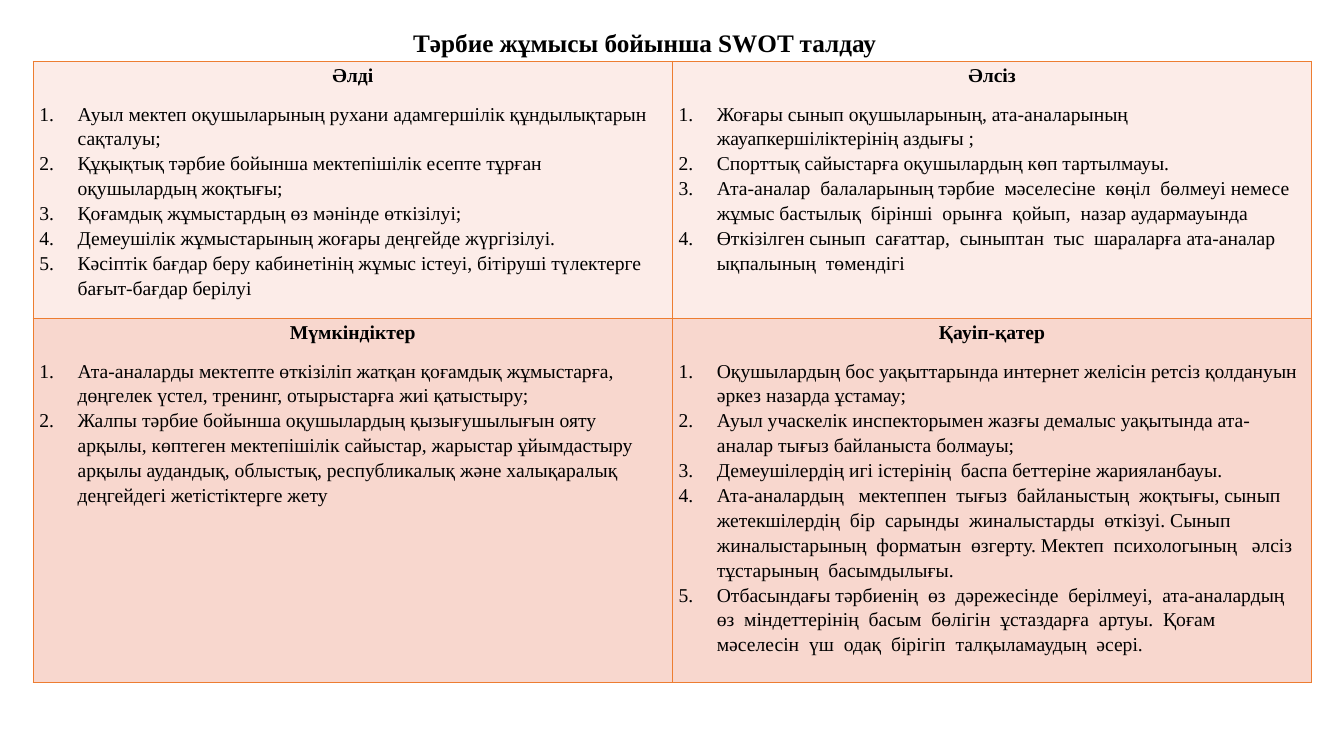
from pptx import Presentation
from pptx.dml.color import RGBColor
from pptx.enum.text import MSO_ANCHOR, MSO_AUTO_SIZE, PP_ALIGN
from pptx.oxml.ns import qn
from pptx.util import Inches, Pt
from lxml.etree import SubElement

BLACK = RGBColor(0x00, 0x00, 0x00)
ORANGE = RGBColor(0xED, 0x7D, 0x31)
PALE_PINK = RGBColor(0xFC, 0xEC, 0xE8)
PINK = RGBColor(0xF8, 0xD7, 0xCE)
FONT = "Times New Roman"

TITLE = "Тәрбие жұмысы бойынша SWOT талдау"
ROW_HEIGHTS = [2.55, 3.61]
ROW_FILLS = [PALE_PINK, PINK]
COLUMN_WIDTH = 6.34
SWOT = [
    [
        ("Әлді", [
            "Ауыл мектеп оқушыларының рухани адамгершілік құндылықтарын сақталуы;",
            "Құқықтық тәрбие бойынша мектепішілік есепте тұрған оқушылардың жоқтығы;",
            "Қоғамдық жұмыстардың өз мәнінде өткізілуі;",
            "Демеушілік жұмыстарының жоғары деңгейде жүргізілуі.",
            "Кәсіптік бағдар беру кабинетінің жұмыс істеуі, бітіруші түлектерге "
            "бағыт-бағдар берілуі",
        ]),
        ("Әлсіз", [
            "Жоғары сынып оқушыларының, ата-аналарының жауапкершіліктерінің аздығы ;",
            "Спорттық сайыстарға оқушылардың көп тартылмауы.",
            "Ата-аналар  балаларының тәрбие  мәселесіне  көңіл  бөлмеуі немесе  "
            "жұмыс бастылық  бірінші  орынға  қойып,  назар аудармауында",
            "Өткізілген сынып  сағаттар,  сыныптан  тыс  шараларға ата-аналар  "
            "ықпалының  төмендігі",
        ]),
    ],
    [
        ("Мүмкіндіктер", [
            "Ата-аналарды мектепте өткізіліп жатқан қоғамдық жұмыстарға, "
            "дөңгелек үстел, тренинг, отырыстарға жиі қатыстыру;",
            "Жалпы тәрбие бойынша оқушылардың қызығушылығын ояту арқылы, "
            "көптеген мектепішілік сайыстар, жарыстар ұйымдастыру арқылы "
            "аудандық, облыстық, республикалық және халықаралық деңгейдегі "
            "жетістіктерге жету",
        ]),
        ("Қауіп-қатер", [
            "Оқушылардың бос уақыттарында интернет желісін ретсіз қолдануын "
            "әркез назарда ұстамау;",
            "Ауыл учаскелік инспекторымен жазғы демалыс уақытында ата-аналар "
            "тығыз байланыста болмауы;",
            "Демеушілердің игі істерінің  баспа беттеріне жарияланбауы.",
            "Ата-аналардың   мектеппен  тығыз  байланыстың  жоқтығы, сынып "
            "жетекшілердің  бір  сарынды  жиналыстарды  өткізуі. Сынып "
            "жиналыстарының  форматын  өзгерту. Мектеп  психологының   әлсіз "
            "тұстарының  басымдылығы.",
            "Отбасындағы тәрбиенің  өз  дәрежесінде  берілмеуі,  ата-аналардың  "
            "өз  міндеттерінің  басым  бөлігін  ұстаздарға  артуы.  Қоғам  "
            "мәселесін  үш  одақ  бірігіп  талқыламаудың  әсері.",
        ]),
    ],
]


def format_paragraph(paragraph, text, size=14, bold=False, space_after=0):
    paragraph.text = text
    paragraph.line_spacing = 1.15
    paragraph.space_after = Pt(space_after)
    paragraph.alignment = PP_ALIGN.CENTER if bold else PP_ALIGN.LEFT
    font = paragraph.font
    font.name, font.size, font.bold = FONT, Pt(size), bold
    font.color.rgb = BLACK


def number_paragraph(paragraph):
    properties = paragraph._p.get_or_add_pPr()
    properties.set("marL", str(Inches(0.38)))
    properties.set("indent", str(Inches(-0.38)))
    numbering = properties.makeelement(qn("a:buAutoNum"), {"type": "arabicPeriod"})
    properties.insert_element_before(numbering, "a:tabLst", "a:defRPr", "a:extLst")


def add_borders(cell):
    properties = cell._tc.get_or_add_tcPr()
    for side in ("a:lnL", "a:lnR", "a:lnT", "a:lnB"):
        line = SubElement(properties, qn(side), w=str(Pt(1)))
        fill = SubElement(line, qn("a:solidFill"))
        SubElement(fill, qn("a:srgbClr"), val=str(ORANGE))


def fill_cell(cell, heading, items, color):
    cell.margin_left = cell.margin_right = Inches(0.06)
    cell.margin_top = cell.margin_bottom = 0
    add_borders(cell)
    cell.fill.solid()
    cell.fill.fore_color.rgb = color
    text_frame = cell.text_frame
    format_paragraph(text_frame.paragraphs[0], heading, bold=True, space_after=10)
    for item in items:
        paragraph = text_frame.add_paragraph()
        format_paragraph(paragraph, item)
        number_paragraph(paragraph)


def set_title(slide):
    title = slide.shapes.title
    title.left, title.top = Inches(3.06), Inches(0.18)
    title.width, title.height = Inches(6.67), Inches(0.43)
    text_frame = title.text_frame
    text_frame.word_wrap = True
    text_frame.auto_size = MSO_AUTO_SIZE.NONE
    text_frame.vertical_anchor = MSO_ANCHOR.TOP
    format_paragraph(text_frame.paragraphs[0], TITLE, size=18, bold=True, space_after=10)


def add_swot_table(slide):
    frame = slide.shapes.add_table(
        2, 2, Inches(0.33), Inches(0.61),
        Inches(2 * COLUMN_WIDTH), Inches(sum(ROW_HEIGHTS)))
    table = frame.table
    table.first_row = table.horz_banding = False
    for column in table.columns:
        column.width = Inches(COLUMN_WIDTH)
    for row, height, color, quadrants in zip(table.rows, ROW_HEIGHTS, ROW_FILLS, SWOT):
        row.height = Inches(height)
        for cell, (heading, items) in zip(row.cells, quadrants):
            fill_cell(cell, heading, items, color)


def main():
    presentation = Presentation()
    presentation.slide_width = Inches(13.33)
    presentation.slide_height = Inches(7.5)
    slide = presentation.slides.add_slide(presentation.slide_layouts[5])
    set_title(slide)
    add_swot_table(slide)
    presentation.save("out.pptx")


if __name__ == "__main__":
    main()
